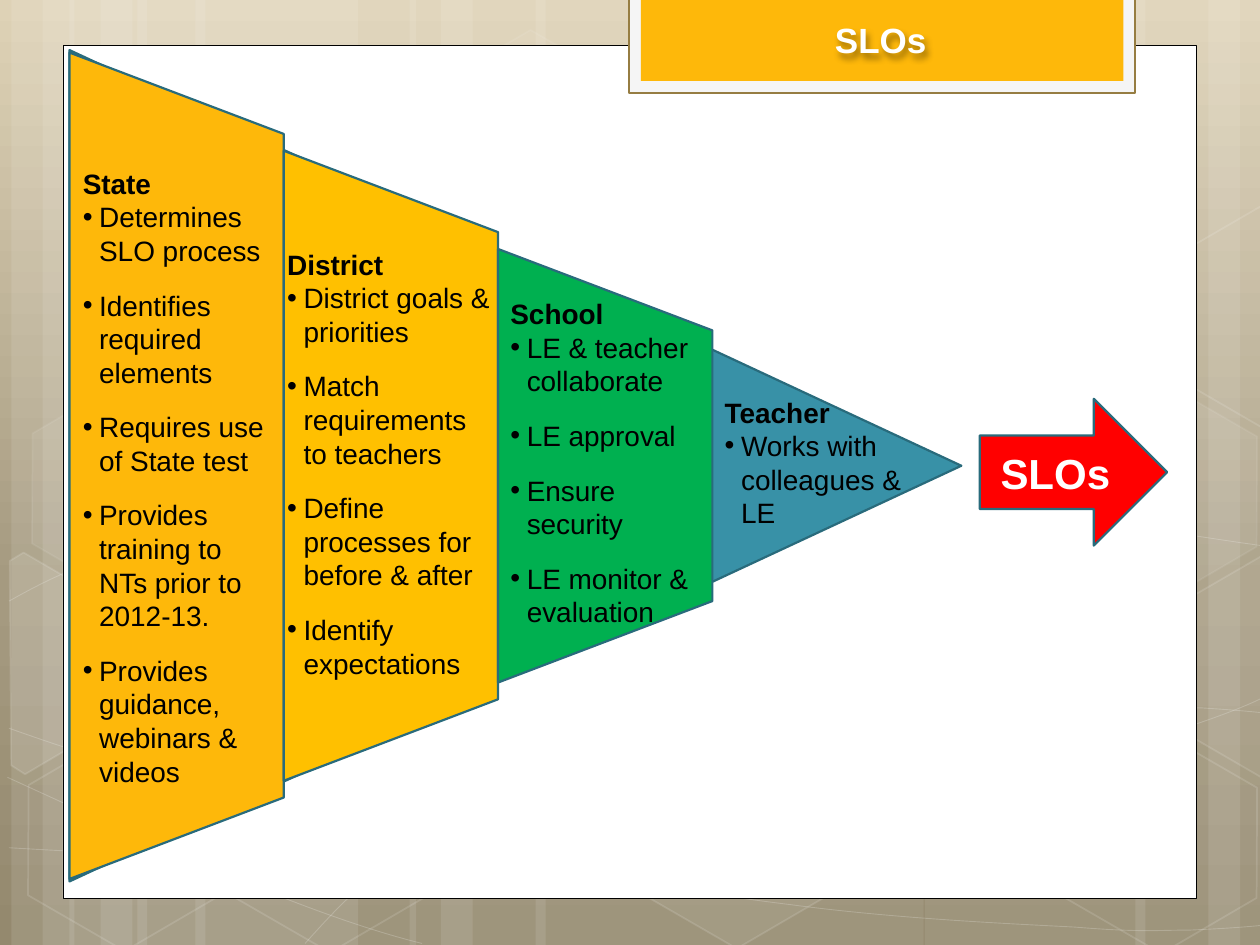
from copy import deepcopy
from math import cos, radians, sin

from lxml.etree import SubElement
from pptx import Presentation
from pptx.dml.color import RGBColor
from pptx.enum.shapes import MSO_SHAPE
from pptx.enum.text import MSO_AUTO_SIZE, PP_ALIGN
from pptx.oxml.ns import qn
from pptx.util import Cm, Pt

COLORS = {
    "white": "FFFFFF", "black": "000000", "sand": "DED2B6", "stone": "A59A80",
    "earth": "94896E", "pale": "F5F5F5", "bronze": "967D42", "amber": "FEB80A",
    "gold": "FFC000", "green": "00B050", "teal": "3891A7", "edge": "296B7C",
    "red": "FF0000",
}
BODY = {"name": "Arial", "size": Pt(16), "bold": False}
HEADING = {**BODY, "bold": True}
ARROW_LABEL = {**HEADING, "size": Pt(24)}
TITLE = {**HEADING, "size": Pt(20)}

# Stripe sets: edge position, direction, width of the broad stripe
STRIPE_SETS = [(0.23, 1, 4.45), (1.4, 1, 4.45), (25.63, -1, 4.45), (8.26, 1, 7.82)]

# Chains of Bezier points: start, then two controls and an end per section
CURVES = [
    [(0.18, 17.09), (1.55, 17.17), (2.92, 17.25), (4.83, 17.22), (6.73, 17.2),
     (9.09, 17.15), (11.63, 16.89), (14.17, 16.64), (17.78, 16.15), (20.12, 15.67),
     (22.43, 15.19), (24.82, 14.43), (25.58, 14)],
    [(0.18, 12.12), (0.91, 11.71), (1.65, 11.33), (3.07, 10.95), (4.52, 10.57),
     (6.58, 10.01), (8.81, 9.83), (11.07, 9.65), (13.82, 9.63), (16.61, 9.83),
     (19.41, 10.03), (24.05, 10.82), (25.58, 11.02)],
    [(0.15, 15.67), (3.2, 17.07), (6.27, 18.47), (8.51, 19.02)],
    [(0.18, 14.68), (0.97, 14.96), (1.78, 15.24), (3.25, 15.65), (4.72, 16.03),
     (6.93, 16.66), (9.07, 17.09), (11.18, 17.53), (13.84, 17.98), (15.95, 18.24),
     (18.06, 18.52), (20.32, 18.62), (21.67, 18.69), (23.01, 18.8), (23.34, 18.75),
     (24, 18.75), (24.66, 18.72), (25.12, 18.69), (25.58, 18.64)],
    [(6.15, 19.02), (6.6, 18.52), (7.06, 18.01), (7.67, 17.55), (8.28, 17.07),
     (9.14, 16.59), (9.86, 16.23), (10.57, 15.88), (11, 15.72), (11.91, 15.47),
     (12.85, 15.21), (14.55, 14.85), (15.44, 14.68), (16.36, 14.5), (16.48, 14.5),
     (17.27, 14.45), (18.06, 14.38), (19.3, 14.3), (20.17, 14.27), (21.06, 14.25),
     (22.5, 14.27), (22.5, 14.27), (23.07, 14.27), (23.64, 14.27), (24.21, 14.27),
     (24.66, 14.3), (25.1, 14.33), (25.55, 14.38)],
]

# Hexagons: left, top, fill opacity, line opacity (percent)
HEXAGONS = [
    (8.48, 0.91, 4, 8), (12.62, 14.96, 6, 12), (0.28, 15.01, 0, 12),
    (0.36, 7.92, 7, 8), (4.42, 15.04, 0, 12), (19.13, 11.51, 10, 12),
    (21.18, 15.06, 0, 12), (21.18, 7.98, 7, 8),
]
LEFT_HEX = [(0.2, 11.3), (0.48, 11.13), (2.44, 12.27), (2.41, 14.48),
            (0.51, 15.6), (0.23, 15.42)]
RIGHT_HEX = [(23.52, 12.32), (25.45, 11.2), (25.63, 11.33), (25.63, 15.57),
             (25.45, 15.67), (23.52, 14.55)]

# Levels: left, top, width, height of the text, heading, bullets
LEVELS = [
    (1.42, 3.23, 4.32, 12.9, "State",
     ["Determines SLO process", "Identifies required elements",
      "Requires use of State test", "Provides training to NTs prior to 2012-13.",
      "Provides guidance, webinars & videos"]),
    (5.54, 4.86, 4.67, 9.07, "District",
     ["District goals & priorities", "Match requirements to teachers",
      "Define processes for before & after", "Identify expectations"]),
    (10.04, 5.86, 4.57, 7.01, "School",
     ["LE & teacher collaborate", "LE approval", "Ensure security",
      "LE monitor & evaluation"]),
    (14.36, 7.84, 4.32, 4.11, "Teacher", ["Works with colleagues & LE"]),
]


def rgb(color):
    return RGBColor.from_string(COLORS[color])


def paint(fill, color, opacity=100):
    if not color or not opacity:
        fill.background()
        return
    fill.solid()
    fill.fore_color.rgb = rgb(color)
    if opacity < 100:
        clr = fill._xPr.find(qn("a:solidFill"))[0]
        SubElement(clr, qn("a:alpha"), val=str(opacity * 1000))


def style(sp, fill, line=None, width=1.25, opacity=100, line_opacity=100):
    sp.shadow.inherit = False
    paint(sp.fill, fill, opacity)
    paint(sp.line.fill, line, line_opacity)
    if line:
        sp.line.width = Pt(width)


def add_preset(s, kind, box, fill, line=None, rotation=0, adj=None, **look):
    sp = s.shapes.add_shape(kind, *map(Cm, box))
    sp.rotation = rotation
    if adj:
        sp.adjustments[0] = adj
    style(sp, fill, line, **look)


def add_outline(s, points, close, **look):
    pts = [(Cm(x), Cm(y)) for x, y in points]
    fb = s.shapes.build_freeform(*pts[0])
    fb.add_line_segments(pts[1:], close=close)
    sp = fb.convert_to_shape()
    style(sp, line="white", **look)
    return sp


def add_curve(s, chain):
    """Turn every three line points of the outline into one Bezier section."""
    sp = add_outline(s, chain, False, fill=None, width=0.5, line_opacity=20)
    lines = list(sp._element.iter(qn("a:lnTo")))
    for i in range(0, len(lines), 3):
        bezier = SubElement(lines[i].getparent(), qn("a:cubicBezTo"))
        for ln in lines[i:i + 3]:
            bezier.append(ln[0])
            ln.getparent().remove(ln)


def turn_back(points, center, degrees):
    """Undo a rotation, so that the shape itself can carry it."""
    c, d = cos(radians(degrees)), sin(radians(degrees))
    cx, cy = center
    return [(cx + (x - cx) * c + (y - cy) * d, cy - (x - cx) * d + (y - cy) * c)
            for x, y in points]


def add_text(s, box, lines, color):
    """Write (text, format, is_bullet) lines into one text box."""
    sp = s.shapes.add_textbox(*map(Cm, box))
    tf = sp.text_frame
    tf.word_wrap = True
    tf.auto_size = MSO_AUTO_SIZE.SHAPE_TO_FIT_TEXT
    for i, (text, fmt, is_bullet) in enumerate(lines):
        p = tf.add_paragraph() if i else tf.paragraphs[0]
        r = p.add_run()
        r.text = text
        for name, value in fmt.items():
            setattr(r.font, name, value)
        r.font.color.rgb = rgb(color)
        if is_bullet:
            p.space_after = Pt(12)
            pPr = p._p.get_or_add_pPr()
            pPr.set("marL", str(Cm(0.33)))
            pPr.set("indent", str(-Cm(0.33)))
            SubElement(pPr, qn("a:buFont"), typeface="Arial")
            SubElement(pPr, qn("a:buChar"), char="•")
    return sp


def add_shadow(sp):
    effects = SubElement(sp._element.spPr, qn("a:effectLst"))
    shadow = SubElement(effects, qn("a:outerShdw"), blurRad="50800", dist="38100", dir="3600000")
    clr = SubElement(shadow, qn("a:srgbClr"), val=COLORS["black"])
    SubElement(clr, qn("a:alpha"), val="40000")


def add_backdrop(s):
    fill = s.background.fill
    fill.gradient()
    fill.gradient_angle = 270
    first = fill._fill._gradFill.gsLst[0]
    first.addnext(deepcopy(first))
    for stop, (pos, color) in zip(fill.gradient_stops,
                                  [(0, "sand"), (0.62, "stone"), (1, "earth")]):
        stop.position = pos
        stop.color.rgb = rgb(color)

    # Vertical stripes
    for edge, direction, broad in STRIPE_SETS:
        for offset, width in [(2.54, broad), (0, 1.27), (0.63, 2.11)]:
            left = edge + offset if direction > 0 else edge - offset - width
            add_preset(s, MSO_SHAPE.RECTANGLE, (left, 0, width, 19.05), "white", opacity=10)

    # Thin curves and hexagons
    for chain in CURVES:
        add_curve(s, chain)
    for left, top, opacity, line_opacity in HEXAGONS:
        add_preset(s, MSO_SHAPE.HEXAGON, (left, top, 4.45, 3.86), "white", "white", 30, 0.285,
                   width=1, opacity=opacity, line_opacity=line_opacity)
    upper_hex = [(x, y - 7.06) for x, y in RIGHT_HEX]
    for points, center, opacity in [(LEFT_HEX, (0.91, 13.61), 10),
                                    (RIGHT_HEX, (25.02, 13.21), 4),
                                    (upper_hex, (25.02, 6.15), 0)]:
        sp = add_outline(s, turn_back(points, center, 30), True, fill="white", width=1,
                         opacity=opacity, line_opacity=12)
        sp.rotation = 30


def add_panels(s):
    rect = MSO_SHAPE.RECTANGLE
    add_preset(s, rect, (1.27, 0.91, 22.86, 17.2), "white", "black", width=0.5)
    add_preset(s, rect, (12.68, -0.06, 10.21, 1.94), "pale", "bronze")
    add_preset(s, rect, (12.92, -0.1, 9.73, 1.73), "amber")


def add_funnel(s):
    add_preset(s, MSO_SHAPE.ISOSCELES_TRIANGLE, (2.01, 0.4, 16.76, 17.98), "teal", "edge", 90)
    depth = 4.32
    for i, color in enumerate(["amber", "gold", "green"]):
        span = 16.66 - 3.96 * i
        center = 3.56 + depth * i
        add_preset(s, MSO_SHAPE.TRAPEZOID, (center - span / 2, 7.23, span, depth),
                   color, "edge", 90, 0.38)
    add_preset(s, MSO_SHAPE.RIGHT_ARROW, (19.75, 8.04, 3.78, 2.96), "red", "edge")


def main():
    prs = Presentation()
    prs.slide_width, prs.slide_height = Cm(25.4), Cm(19.05)
    s = prs.slides.add_slide(prs.slide_layouts[6])
    add_backdrop(s)
    add_panels(s)
    add_funnel(s)

    # Texts
    for *box, heading, bullets in LEVELS:
        lines = [(heading, HEADING, False)] + [(b, BODY, True) for b in bullets]
        add_text(s, box, lines, "black")
    add_text(s, (19.92, 8.89, 3.05, 1.27), [("SLOs", ARROW_LABEL, False)], "white")
    title = add_text(s, (13.17, 0.25, 9.17, 1.12), [("SLOs", TITLE, False)], "white")
    title.text_frame.paragraphs[0].alignment = PP_ALIGN.CENTER
    add_shadow(title)

    prs.save("out.pptx")


if __name__ == "__main__":
    main()
